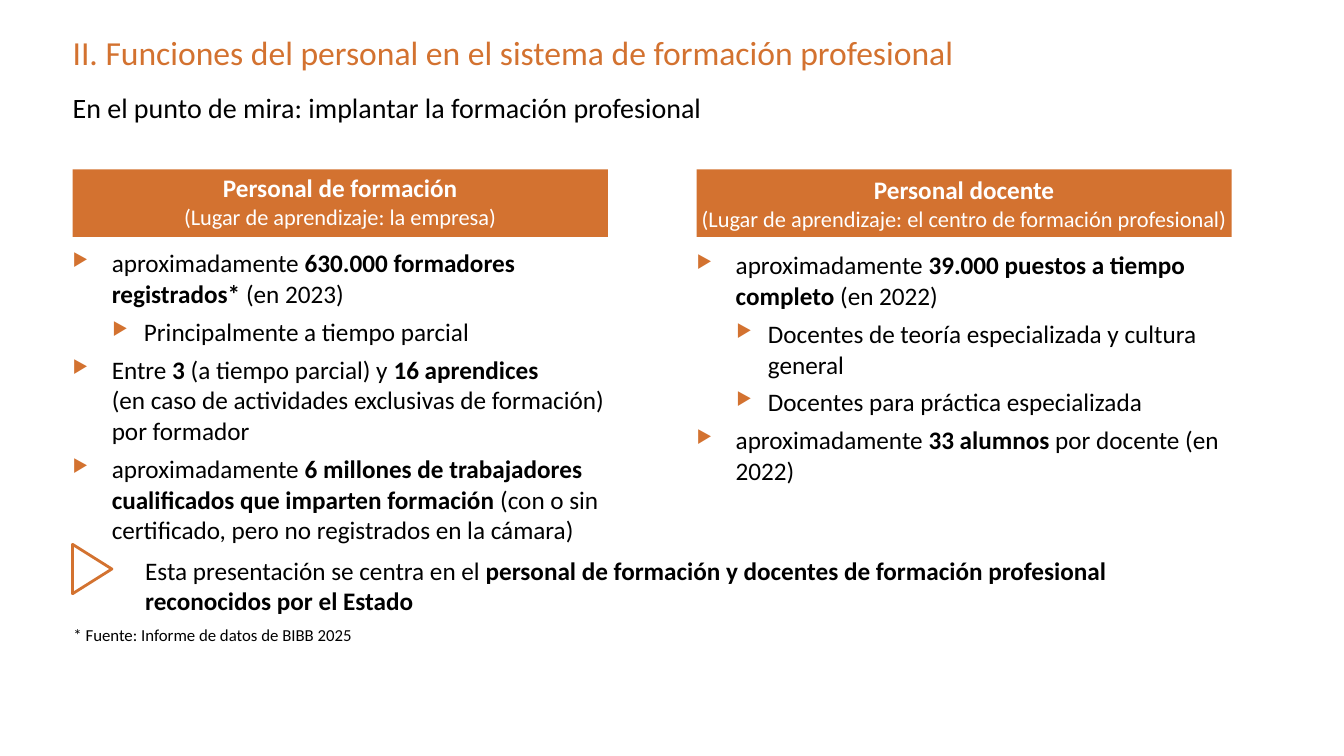
from lxml.etree import SubElement
from pptx import Presentation
from pptx.dml.color import RGBColor
from pptx.enum.shapes import MSO_SHAPE
from pptx.enum.text import MSO_ANCHOR, MSO_AUTO_SIZE, PP_ALIGN
from pptx.oxml.ns import qn
from pptx.util import Pt

COLORS = {"orange": "D37230", "black": "000000", "white": "FFFFFF"}
FONT = "Calibri"
LEFT, RIGHT = 51.84, 497.52  # left edges of the two columns
COLUMN_WIDTH = 382.32
HEADER_TOP, HEADER_HEIGHT = 120.96, 48.24
INDENTS = [(28, -28), (51, -22.5)]  # text margin and bullet offset by level

# Bullets as (level, text); ** switches bold on and off
TRAINERS = [
    (0, "aproximadamente **630.000 formadores registrados* **(en 2023)"),
    (1, "Principalmente a tiempo parcial"),
    (0, "Entre **3** (a tiempo parcial) y **16 aprendices **\n"
        "(en caso de actividades exclusivas de formación) \npor formador"),
    (0, "aproximadamente **6 millones de trabajadores cualificados que imparten "
        "formación** (con o sin certificado, pero no registrados en la cámara)"),
]
TEACHERS = [
    (0, "aproximadamente **39.000 puestos a tiempo completo** (en 2022)"),
    (1, "Docentes de teoría especializada y cultura general"),
    (1, "Docentes para práctica especializada"),
    (0, "aproximadamente **33 alumnos** por docente (en 2022)"),
]


def rgb(name):
    return RGBColor.from_string(COLORS[name])


def style(font, size, color="black", bold=False):
    font.name, font.size, font.bold = FONT, Pt(size), bold
    font.color.rgb = rgb(color)


def prepare(frame, anchor=MSO_ANCHOR.TOP, inset=(0, 0)):
    frame.word_wrap = True
    frame.auto_size = MSO_AUTO_SIZE.NONE
    frame.vertical_anchor = anchor
    frame.margin_left = frame.margin_right = Pt(inset[0])
    frame.margin_top = frame.margin_bottom = Pt(inset[1])


def write(paragraph, marked, size):
    """Fill a paragraph, with bold between ** marks and breaks at newlines."""
    for part, words in enumerate(marked.split("**")):
        for line, text in enumerate(words.split("\n")):
            if line:
                paragraph.add_line_break()
            if text:
                run = paragraph.add_run()
                run.text = text
                style(run.font, size, bold=part % 2 == 1)


def add_text(slide, box, marked, size, inset=(0, 0)):
    frame = slide.shapes.add_textbox(*map(Pt, box)).text_frame
    prepare(frame, inset=inset)
    write(frame.paragraphs[0], marked, size)


def add_bullet(paragraph, level):
    margin, offset = INDENTS[level]
    properties = paragraph._p.get_or_add_pPr()
    properties.set("marL", str(Pt(margin)))
    properties.set("indent", str(Pt(offset)))
    color = SubElement(properties, qn("a:buClr"))
    SubElement(color, qn("a:srgbClr"), val=COLORS["orange"])
    SubElement(properties, qn("a:buSzPct"), val="70000")
    SubElement(properties, qn("a:buChar"), char="▶")


def add_bullets(slide, box, items):
    frame = slide.shapes.add_textbox(*map(Pt, box)).text_frame
    prepare(frame)
    for index, (level, marked) in enumerate(items):
        paragraph = frame.add_paragraph() if index else frame.paragraphs[0]
        add_bullet(paragraph, level)
        paragraph.level = level
        paragraph.line_spacing = Pt(22)
        paragraph.space_before = Pt(5 if index else 0)
        write(paragraph, marked, 18)


def add_header(slide, left, staff, place, first_spacing):
    header = slide.shapes.add_shape(
        MSO_SHAPE.RECTANGLE, Pt(left), Pt(HEADER_TOP), Pt(COLUMN_WIDTH), Pt(HEADER_HEIGHT))
    header.shadow.inherit = False
    header.fill.solid()
    header.fill.fore_color.rgb = rgb("orange")
    header.line.fill.background()
    frame = header.text_frame
    prepare(frame, MSO_ANCHOR.MIDDLE)
    frame.text = f"{staff}\n{place}"
    for paragraph, size, bold in zip(frame.paragraphs, (18, 16), (True, False)):
        paragraph.alignment = PP_ALIGN.CENTER
        style(paragraph.runs[0].font, size, "white", bold)
    frame.paragraphs[0].line_spacing = first_spacing


def add_title(slide, text):
    title = slide.shapes.title
    title.left, title.top, title.width, title.height = map(Pt, (LEFT, 23.04, 708.48, 35.28))
    prepare(title.text_frame)
    title.text_frame.text = text
    paragraph = title.text_frame.paragraphs[0]
    paragraph.alignment = PP_ALIGN.LEFT
    style(paragraph.runs[0].font, 24, "orange")


def add_pointer(slide):
    pointer = slide.shapes.add_shape(
        MSO_SHAPE.ISOSCELES_TRIANGLE, Pt(48.24), Pt(392.4), Pt(35.28), Pt(28.08))
    pointer.rotation = 90
    pointer.shadow.inherit = False
    pointer.fill.background()
    pointer.line.color.rgb = rgb("orange")
    pointer.line.width = Pt(2)


def main():
    deck = Presentation()
    deck.slide_width, deck.slide_height = Pt(960), Pt(540)
    slide = deck.slides.add_slide(deck.slide_layouts[5])

    # Title and subtitle
    add_title(slide, "II. Funciones del personal en el sistema de formación profesional")
    add_text(slide, (LEFT, 64.8, 870.48, 34.56),
             "En el punto de mira: implantar la formación profesional", 20)

    # Company trainers
    add_header(slide, LEFT, "Personal de formación", "(Lugar de aprendizaje: la empresa)", 0.9)
    add_bullets(slide, (LEFT, 176.4, 388.08, 197.28), TRAINERS)

    # School teachers
    add_header(slide, RIGHT, "Personal docente",
               "(Lugar de aprendizaje: el centro de formación profesional)", 1.0)
    add_bullets(slide, (RIGHT, 177.84, COLUMN_WIDTH, 169.92), TEACHERS)

    # Focus of the presentation and source
    add_text(slide, (103.68, 396.72, 780.48, 16.56),
             "Esta presentación se centra en el **personal de formación y docentes de "
             "formación profesional reconocidos por el Estado**", 18)
    add_text(slide, (45.36, 442.8, 514.8, 21.6),
             "* Fuente: Informe de datos de BIBB 2025", 12, inset=(7.2, 3.6))
    add_pointer(slide)

    deck.save("out.pptx")


if __name__ == "__main__":
    main()
